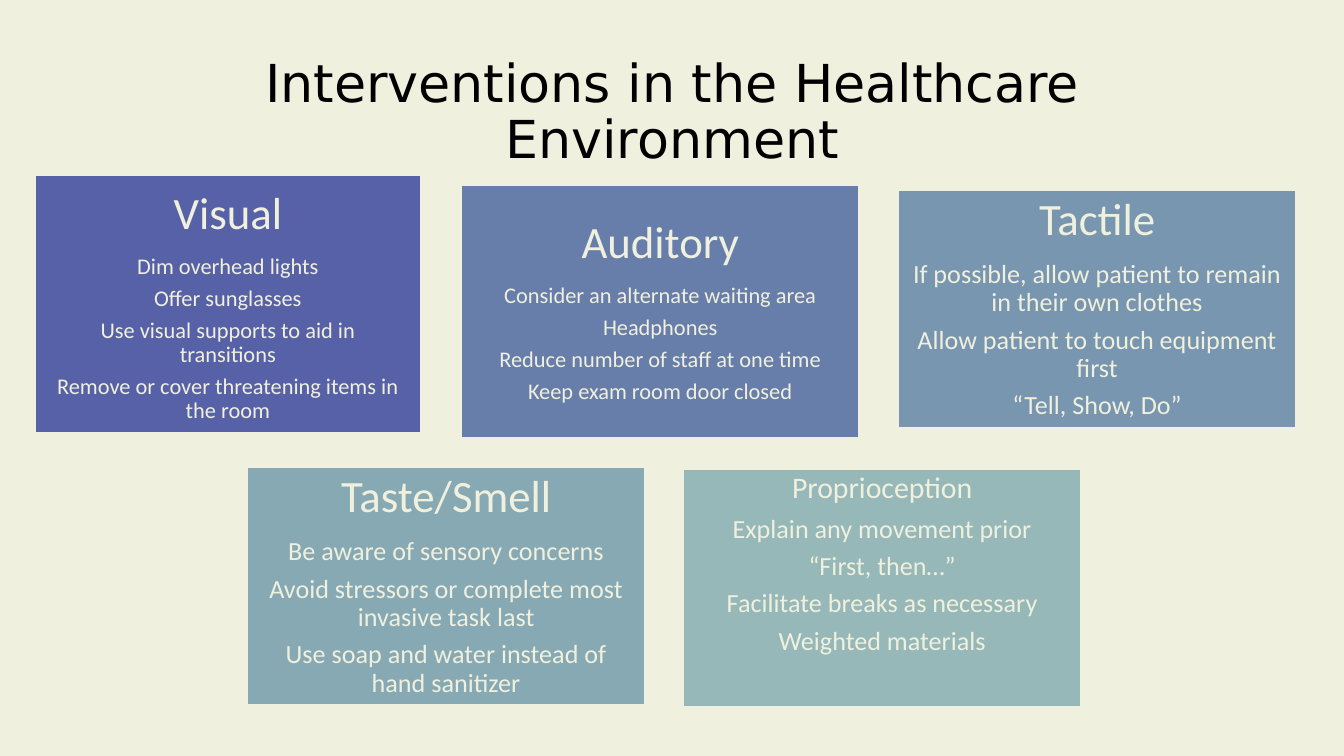
from dataclasses import dataclass

from pptx import Presentation
from pptx.dml.color import RGBColor
from pptx.enum.shapes import MSO_SHAPE
from pptx.enum.text import MSO_ANCHOR, PP_ALIGN
from pptx.util import Pt


@dataclass
class Theme:
    paper: str = "F0F0DE"
    ink: str = "000000"
    visual: str = "5761A7"
    sound: str = "677EAB"
    touch: str = "7896AF"
    taste: str = "87A9B4"
    motion: str = "96B8B9"
    face: str = "DejaVu Sans"
    body: str = "Calibri"
    title: int = 28
    head: int = 24
    sub: int = 16
    text: int = 14
    small: int = 12


def color(code):
    return RGBColor.from_string(code)


class Deck:
    def __init__(self, theme):
        self.theme = theme
        self.file = Presentation()
        self.file.slide_width = Pt(720)
        self.file.slide_height = Pt(405)
        self.slide = self.file.slides.add_slide(self.file.slide_layouts[6])
        back = self.slide.background.fill
        back.solid()
        back.fore_color.rgb = color(theme.paper)

    def line(self, para, text, size, face, ink):
        para.alignment = PP_ALIGN.CENTER
        para.line_spacing = 0.9
        run = para.add_run()
        run.text = text
        run.font.size = Pt(size)
        run.font.name = face
        run.font.color.rgb = color(ink)

    def title(self, box, text):
        frame = self.slide.shapes.add_textbox(*map(Pt, box)).text_frame
        frame.word_wrap = True
        frame.vertical_anchor = MSO_ANCHOR.MIDDLE
        look = self.theme
        self.line(frame.paragraphs[0], text, look.title, look.face, look.ink)

    def card(self, box, fill, head, items, pad=7.2, top=None):
        """Draw a filled box; head and items are (text, size) pairs.

        Text is centred vertically unless top gives its distance from the edge.
        """
        look = self.theme
        shape = self.slide.shapes.add_shape(MSO_SHAPE.RECTANGLE, *map(Pt, box))
        shape.shadow.inherit = False
        shape.fill.solid()
        shape.fill.fore_color.rgb = color(fill)
        shape.line.color.rgb = color(look.paper)
        shape.line.width = Pt(1)
        frame = shape.text_frame
        frame.word_wrap = True
        frame.margin_left = frame.margin_right = Pt(pad)
        frame.margin_top = Pt(pad if top is None else top)
        frame.margin_bottom = Pt(pad)
        frame.vertical_anchor = MSO_ANCHOR.MIDDLE if top is None else MSO_ANCHOR.TOP
        for i, (text, size) in enumerate([head, *items]):
            para = frame.add_paragraph() if i else frame.paragraphs[0]
            para.space_after = Pt(round(0.35 * size, 1))
            self.line(para, text, size, look.body, look.paper)


def sized(size, *texts):
    return [(text, size) for text in texts]


def main():
    look = Theme()
    deck = Deck(look)
    wide, high = 213.1, 127.4

    deck.title((49.7, 21.6, 620.6, 78.5),
               "Interventions in the Healthcare Environment")
    deck.card((18.9, 93.7, 206.4, 138.2), look.visual, ("Visual", look.head),
              sized(look.small,
                    "Dim overhead lights",
                    "Offer sunglasses",
                    "Use visual supports to aid in transitions",
                    "Remove or cover threatening items in the room"),
              pad=8.6, top=8.6)
    deck.card((247.2, 99.4, wide, 135.4), look.sound, ("Auditory", look.head),
              sized(look.small,
                    "Consider an alternate waiting area",
                    "Headphones",
                    "Reduce number of staff at one time",
                    "Keep exam room door closed"))
    deck.card((481.2, 101.8, wide, high), look.touch, ("Tactile", look.head),
              sized(look.text,
                    "If possible, allow patient to remain in their own clothes",
                    "Allow patient to touch equipment first",
                    "“Tell, Show, Do”"))
    deck.card((132.5, 250.2, wide, high), look.taste, ("Taste/Smell", look.head),
              sized(look.text,
                    "Be aware of sensory concerns",
                    "Avoid stressors or complete most invasive task last",
                    "Use soap and water instead of hand sanitizer"))
    deck.card((366.1, 251.3, wide, high), look.motion, ("Proprioception", look.sub),
              sized(look.text,
                    "Explain any movement prior",
                    "“First, then…”",
                    "Facilitate breaks as necessary",
                    "Weighted materials"),
              pad=5, top=2)
    deck.file.save("out.pptx")


if __name__ == "__main__":
    main()
